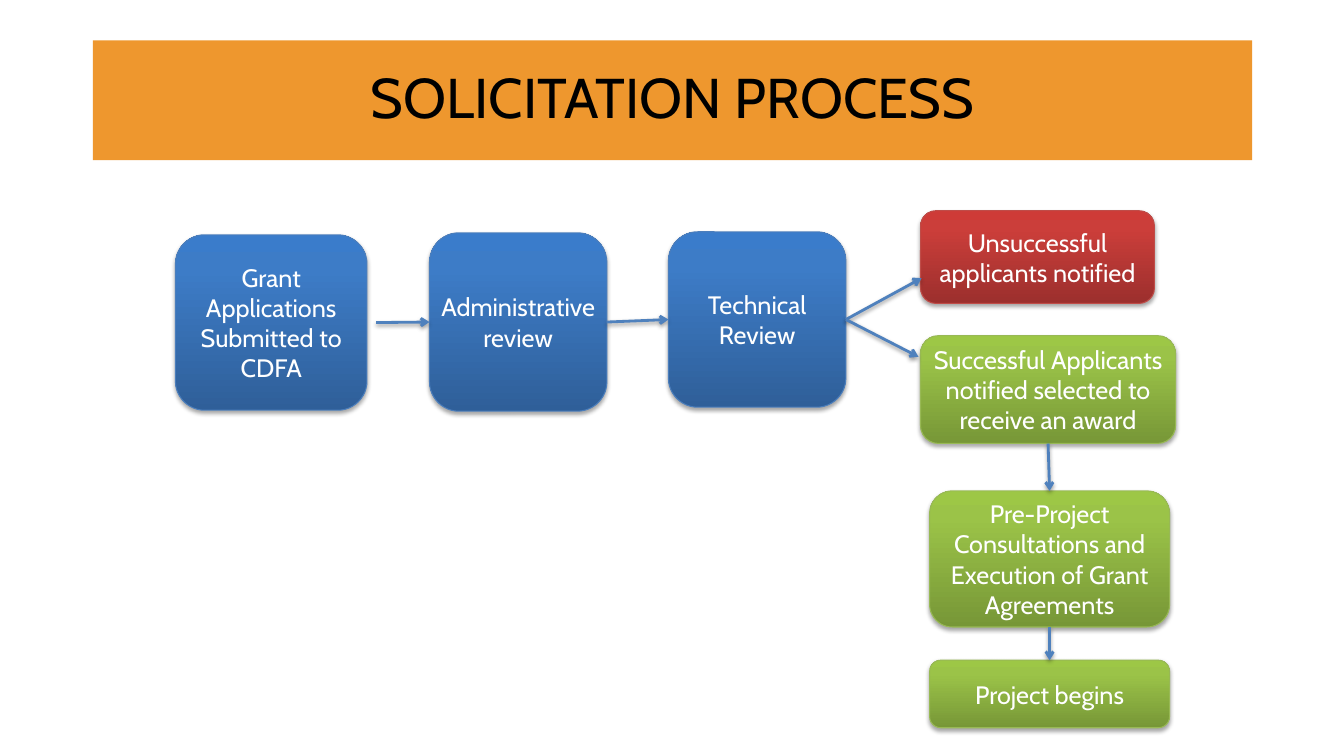
from copy import deepcopy

from lxml.etree import SubElement
from pptx import Presentation
from pptx.dml.color import RGBColor
from pptx.enum.shapes import MSO_CONNECTOR, MSO_SHAPE
from pptx.enum.text import MSO_ANCHOR, PP_ALIGN
from pptx.oxml.ns import qn
from pptx.util import Inches, Pt

FONT = "Cabin"
TOP, LEFT, BOTTOM, RIGHT = range(4)

# Gradient from bottom to top, then outline
PALETTES = {
    "blue": (("2F5F99", "3D7CC7", "3A7CCB"), "4B7EBC"),
    "red": (("9C2F2D", "CB3E3A", "CE3B37"), "BF4C48"),
    "green": (("779737", "9BC348", "9DC746"), "98B955"),
}
GRADIENT_POSITIONS = (0, 0.8, 1)

# Name: text, palette, (left, top, width, height)
STEPS = {
    "submitted": ("Grant Applications Submitted to CDFA", "blue", (1.74, 2.33, 1.9, 1.74)),
    "administrative": ("Administrative review", "blue", (4.26, 2.31, 1.76, 1.77)),
    "technical": ("Technical Review", "blue", (6.63, 2.3, 1.76, 1.74)),
    "unsuccessful": ("Unsuccessful applicants notified", "red", (9.13, 2.09, 2.32, 0.92)),
    "successful": ("Successful Applicants notified selected to receive an award",
                   "green", (9.13, 3.33, 2.53, 1.07)),
    "consultations": ("Pre-Project Consultations and Execution of Grant Agreements",
                      "green", (9.22, 4.87, 2.38, 1.35)),
    "begins": ("Project begins", "green", (9.22, 6.55, 2.38, 0.67)),
}

# Each end is a free point or a step with one of its sides
ARROWS = [
    ((3.73, 3.2), ("administrative", LEFT)),
    (("administrative", RIGHT), ("technical", LEFT)),
    (("technical", RIGHT), (9.14, 2.76)),
    (("technical", RIGHT), (9.11, 3.54)),
    (("successful", BOTTOM), ("consultations", TOP)),
    (("consultations", BOTTOM), ("begins", TOP)),
]


def color(hex_string):
    return RGBColor.from_string(hex_string)


def write(shape, text, size, font_color, spacing=None):
    frame = shape.text_frame
    frame.word_wrap = True
    frame.vertical_anchor = MSO_ANCHOR.MIDDLE
    para = frame.paragraphs[0]
    para.alignment = PP_ALIGN.CENTER
    para.line_spacing = spacing
    span = para.add_run()
    span.text = text
    span.font.size = Pt(size)
    span.font.name = FONT
    span.font.color.rgb = color(font_color)


def add_shadow(properties, opacity, distance):
    """Put a soft black shadow straight below; opacity in percent, distance in points."""
    effects = properties.find(qn("a:effectLst"))
    if effects is None:
        effects = SubElement(properties, qn("a:effectLst"))
    shadow = SubElement(effects, qn("a:outerShdw"), blurRad=str(Pt(3.1)),
                        dist=str(Pt(distance)), dir="5400000", rotWithShape="0")
    black = SubElement(shadow, qn("a:srgbClr"), val="000000")
    SubElement(black, qn("a:alpha"), val=str(opacity * 1000))


def add_step(page, text, palette, bounds):
    box = page.shapes.add_shape(MSO_SHAPE.ROUNDED_RECTANGLE, *map(Inches, bounds))
    gradient, outline = PALETTES[palette]
    box.fill.gradient()
    box.fill.gradient_angle = 90
    stops = box.fill._xPr.find(".//" + qn("a:gsLst"))
    stops.append(deepcopy(stops[-1]))
    for stop, position, shade in zip(box.fill.gradient_stops, GRADIENT_POSITIONS, gradient):
        stop.position = position
        stop.color.rgb = color(shade)
    box.line.color.rgb = color(outline)
    box.line.width = Pt(0.75)
    box.shadow.inherit = False
    add_shadow(box.element.spPr, 35, 1.8)
    frame = box.text_frame
    frame.margin_left = frame.margin_top = frame.margin_right = frame.margin_bottom = 0
    write(box, text, 18, "FFFFFF")
    return box


def add_arrow(page, boxes, start, end):
    points = [(0, 0) if point[0] in boxes else point for point in (start, end)]
    arrow = page.shapes.add_connector(
        MSO_CONNECTOR.STRAIGHT, *[Inches(value) for point in points for value in point])
    for point, connect in ((start, arrow.begin_connect), (end, arrow.end_connect)):
        if point[0] in boxes:
            connect(boxes[point[0]], point[1])
    arrow.line.color.rgb = color("4F81BD")
    arrow.line.width = Pt(2)
    SubElement(arrow.line._get_or_add_ln(), qn("a:tailEnd"), type="arrow")
    add_shadow(arrow.element.spPr, 38, 1.6)


def main():
    deck = Presentation()
    deck.slide_width, deck.slide_height = Inches(13.33), Inches(7.5)
    page = deck.slides.add_slide(deck.slide_layouts[5])

    title = page.shapes.title
    title.left, title.top, title.width, title.height = map(Inches, (0.92, 0.4, 11.5, 1.19))
    title.fill.solid()
    title.fill.fore_color.rgb = color("EE972E")
    write(title, "SOLICITATION PROCESS", 40, "000000", spacing=0.9)

    boxes = {name: add_step(page, *step) for name, step in STEPS.items()}
    for start, end in ARROWS:
        add_arrow(page, boxes, start, end)
    deck.save("out.pptx")


if __name__ == "__main__":
    main()
